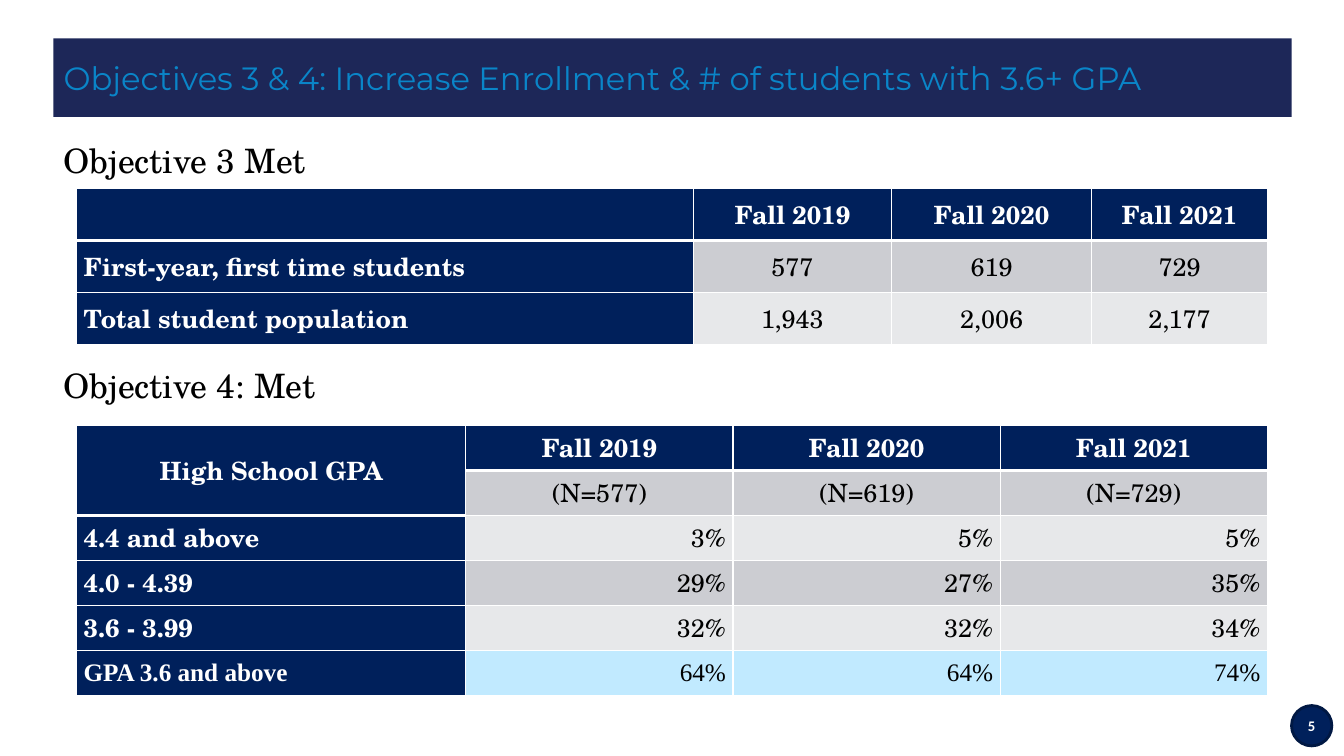
from lxml import etree
from pptx import Presentation
from pptx import util as u
from pptx.dml.color import RGBColor
from pptx.enum import shapes, text
from pptx.oxml import ns

PX = 9144
NAVY = RGBColor(0x00, 0x20, 0x5B)
NAVY_EDGE = RGBColor(0x00, 0x18, 0x43)
BANNER = RGBColor(0x1D, 0x27, 0x58)
BLUE = RGBColor(0x0A, 0x85, 0xC8)
WHITE = RGBColor(0xFF, 0xFF, 0xFF)
BLACK = RGBColor(0x00, 0x00, 0x00)
BAND_DARK = RGBColor(0xCC, 0xCD, 0xD2)
BAND_LIGHT = RGBColor(0xE7, 0xE8, 0xEA)
HIGHLIGHT = RGBColor(0xC1, 0xEA, 0xFF)

SERIF = "TeX Gyre Schola"
LEFT, CENTER, RIGHT = text.PP_ALIGN.LEFT, text.PP_ALIGN.CENTER, text.PP_ALIGN.RIGHT
MIDDLE, TOP = text.MSO_ANCHOR.MIDDLE, text.MSO_ANCHOR.TOP
TERMS = ["Fall 2019", "Fall 2020", "Fall 2021"]

ENROLLMENT = [
    ["", *TERMS],
    ["First-year, first time students", "577", "619", "729"],
    ["Total student population", "1,943", "2,006", "2,177"],
]
GPA = [
    ["High School GPA", *TERMS],
    ["", "(N=577)", "(N=619)", "(N=729)"],
    ["4.4 and above", "3%", "5%", "5%"],
    ["4.0 - 4.39", "29%", "27%", "35%"],
    ["3.6 - 3.99", "32%", "32%", "34%"],
    ["GPA 3.6 and above", "64%", "64%", "74%"],
]


def emu(box):
    """Turn px lengths into EMU."""
    return [u.Emu(length * PX) for length in box]


def apply(target, values):
    """Set each named attribute on the target."""
    for name, value in values.items():
        setattr(target, name, value)


def write(frame, words, alignment, size, font, color, bold=False):
    """Write one formatted paragraph into a text frame."""
    paragraph = frame.paragraphs[0]
    paragraph.alignment = alignment
    run = paragraph.add_run()
    run.text = words
    apply(run.font, {"size": u.Pt(size), "name": font, "bold": bold})
    run.font.color.rgb = color


def add_title(slide, box, words):
    """Place the title as a filled banner."""
    title = slide.shapes.title
    apply(title, dict(zip(("left", "top", "width", "height"), emu(box))))
    title.fill.solid()
    title.fill.fore_color.rgb = BANNER
    apply(title.text_frame, {"word_wrap": True, "auto_size": text.MSO_AUTO_SIZE.NONE,
                             "vertical_anchor": MIDDLE})
    write(title.text_frame, words, LEFT, 23, "Montserrat", BLUE)


def add_heading(slide, box, words):
    """Add an objective heading."""
    frame = slide.shapes.add_textbox(*emu(box)).text_frame
    apply(frame, {"word_wrap": True, "vertical_anchor": TOP})
    write(frame, words, LEFT, 24, SERIF, BLACK)


def add_borders(cell, top, bottom):
    """Draw white cell borders with the given top and bottom widths in points."""
    properties = cell._tc.get_or_add_tcPr()
    for side, width in (("L", 1), ("R", 1), ("T", top), ("B", bottom)):
        line = etree.SubElement(properties, ns.qn(f"a:ln{side}"), w=str(u.Pt(width)))
        fill = etree.SubElement(line, ns.qn("a:solidFill"))
        etree.SubElement(fill, ns.qn("a:srgbClr"), val=str(WHITE))


def add_table(slide, box, widths, rows, header_rows=1, value_alignment=CENTER, total=False):
    """Add a table with navy headers, banded values and an optional total row."""
    table = slide.shapes.add_table(len(rows), len(widths), *emu(box)).table
    for column, width in zip(table.columns, emu(widths)):
        column.width = width
    for row in table.rows:
        row.height = u.Emu(box[3] * PX // len(rows))
    if header_rows > 1:
        table.cell(0, 0).merge(table.cell(header_rows - 1, 0))
    for r, values in enumerate(rows):
        is_total = total and r == len(rows) - 1
        band = HIGHLIGHT if is_total else BAND_DARK if r % 2 else BAND_LIGHT
        for c, words in enumerate(values):
            cell = table.cell(r, c)
            navy = r == 0 or c == 0
            header_end = header_rows - 1 if c == 0 else 0
            add_borders(cell, 3 if r == header_end + 1 else 1, 3 if r == header_end else 1)
            cell.fill.solid()
            cell.fill.fore_color.rgb = NAVY if navy else band
            inset = u.Emu(7 * PX)
            apply(cell, {"vertical_anchor": MIDDLE, "margin_left": inset, "margin_right": inset,
                         "margin_top": 0, "margin_bottom": 0})
            if words:
                in_header = r < header_rows
                alignment = CENTER if in_header else LEFT if c == 0 else value_alignment
                write(cell.text_frame, words, alignment, 18,
                      "Times New Roman" if is_total else SERIF,
                      WHITE if navy else BLACK, navy)


def add_page_badge(slide, box, number):
    """Add the round page number."""
    badge = slide.shapes.add_shape(shapes.MSO_SHAPE.OVAL, *emu(box))
    badge.shadow.inherit = False
    badge.fill.solid()
    badge.fill.fore_color.rgb = NAVY
    badge.line.color.rgb = NAVY_EDGE
    badge.line.width = u.Pt(2)
    apply(badge.text_frame, {"margin_left": 0, "margin_right": 0, "margin_top": 0,
                             "margin_bottom": 0, "vertical_anchor": MIDDLE})
    write(badge.text_frame, number, CENTER, 10.5, "Calibri", WHITE, True)


def add_objectives_slide(presentation):
    """Build the slide for objectives 3 and 4."""
    slide = presentation.slides.add_slide(presentation.slide_layouts[5])
    add_page_badge(slide, (1281, 700, 40, 40), "5")
    add_title(slide, (53, 38, 1228, 78),
              "Objectives 3 & 4: Increase Enrollment & # of students with 3.6+ GPA")
    add_heading(slide, (53, 134, 1228, 50), "Objective 3 Met")
    add_table(slide, (76, 187, 1181, 155), (612, 196, 199, 174), ENROLLMENT)
    add_heading(slide, (53, 357, 1228, 50), "Objective 4: Met")
    add_table(slide, (76, 422, 1181, 268), (386, 265, 265, 265), GPA,
              header_rows=2, value_alignment=RIGHT, total=True)


def main():
    """Create and save the presentation."""
    presentation = Presentation()
    apply(presentation, dict(zip(("slide_width", "slide_height"), emu((1333, 750)))))
    add_objectives_slide(presentation)
    presentation.save("out.pptx")


if __name__ == "__main__":
    main()
